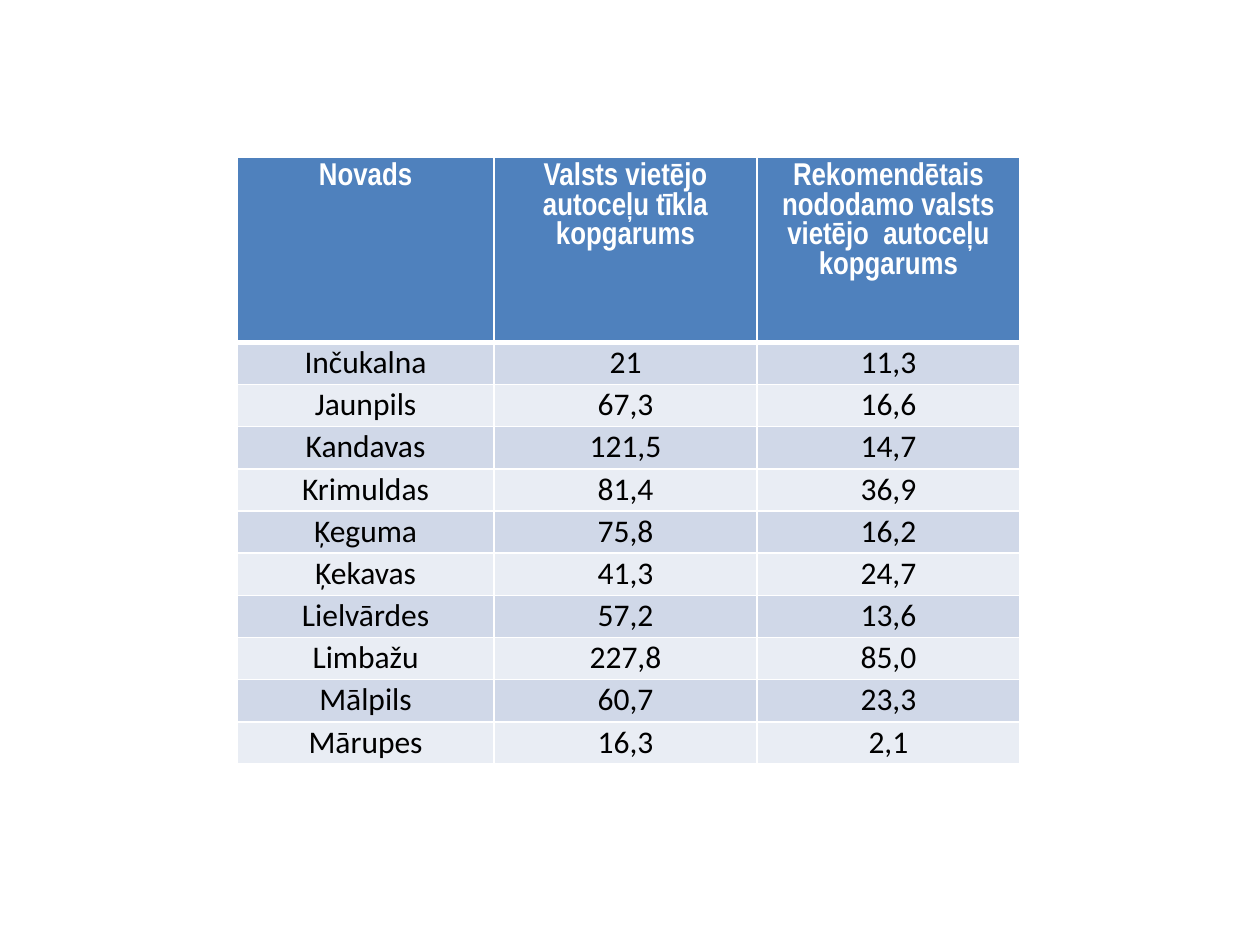
from dataclasses import dataclass

from lxml.etree import SubElement
from pptx import Presentation
from pptx.dml.color import RGBColor
from pptx.enum.text import MSO_ANCHOR, PP_ALIGN
from pptx.oxml.ns import qn
from pptx.table import _Cell
from pptx.util import Cm, Pt


@dataclass(frozen=True)
class Theme:
    header_fill: str = "4F81BD"
    band_fills: tuple[str, str] = ("D0D8E8", "E9EDF4")
    header_text: str = "FFFFFF"
    body_text: str = "000000"
    border: str = "FFFFFF"
    header_font: str = "Arial Narrow"
    body_font: str = "Calibri"
    text_size: int = 18
    thin: int = 1
    thick: int = 3


@dataclass(frozen=True)
class CellStyle:
    fill: str
    color: str
    font: str
    bold: bool
    anchor: MSO_ANCHOR
    margins: tuple[float, float, float, float]  # left, top, right, bottom in cm
    top: int
    bottom: int


@dataclass(frozen=True)
class Municipality:
    name: str
    network_length: str
    transfer_length: str


THEME = Theme()
HEADINGS = (
    "Novads",
    "Valsts vietējo autoceļu tīkla kopgarums",
    "Rekomendētais nododamo valsts vietējo  autoceļu kopgarums",
)
MUNICIPALITIES = (
    Municipality("Inčukalna", "21", "11,3"),
    Municipality("Jaunpils", "67,3", "16,6"),
    Municipality("Kandavas", "121,5", "14,7"),
    Municipality("Krimuldas", "81,4", "36,9"),
    Municipality("Ķeguma", "75,8", "16,2"),
    Municipality("Ķekavas", "41,3", "24,7"),
    Municipality("Lielvārdes", "57,2", "13,6"),
    Municipality("Limbažu", "227,8", "85,0"),
    Municipality("Mālpils", "60,7", "23,3"),
    Municipality("Mārupes", "16,3", "2,1"),
)
COLUMN_WIDTHS = (Cm(5.18), Cm(5.3), Cm(5.3))
HEADER_HEIGHT = Cm(3.72)
BODY_HEIGHT = Cm(0.85)


def header_style() -> CellStyle:
    return CellStyle(THEME.header_fill, THEME.header_text, THEME.header_font, True,
                     MSO_ANCHOR.TOP, (0.18, 0.1, 0.18, 0.1), THEME.thin, THEME.thick)


def body_style(index: int) -> CellStyle:
    """Alternate the bands; the first row shares the thick rule under the header."""
    return CellStyle(THEME.band_fills[index % 2], THEME.body_text, THEME.body_font, False,
                     MSO_ANCHOR.BOTTOM, (0, 0, 0, 0.05),
                     THEME.thin if index else THEME.thick, THEME.thin)


def add_borders(cell: _Cell, style: CellStyle) -> None:
    """Add the border lines, which must precede the cell's fill."""
    properties = cell._tc.get_or_add_tcPr()
    widths = {"a:lnL": THEME.thin, "a:lnR": THEME.thin,
              "a:lnT": style.top, "a:lnB": style.bottom}
    for edge, width in widths.items():
        line = SubElement(properties, qn(edge), w=str(Pt(width)))
        SubElement(SubElement(line, qn("a:solidFill")), qn("a:srgbClr"), val=THEME.border)


def fill_cell(cell: _Cell, content: str, style: CellStyle) -> None:
    add_borders(cell, style)
    cell.fill.solid()
    cell.fill.fore_color.rgb = RGBColor.from_string(style.fill)
    cell.vertical_anchor = style.anchor
    (cell.margin_left, cell.margin_top,
     cell.margin_right, cell.margin_bottom) = map(Cm, style.margins)
    cell.text_frame.text = content
    paragraph = cell.text_frame.paragraphs[0]
    paragraph.alignment = PP_ALIGN.CENTER
    font = paragraph.runs[0].font
    font.name = style.font
    font.size = Pt(THEME.text_size)
    font.bold = style.bold
    font.color.rgb = RGBColor.from_string(style.color)


def main() -> None:
    presentation = Presentation()
    presentation.slide_width, presentation.slide_height = Cm(25.4), Cm(19.05)
    slide = presentation.slides.add_slide(presentation.slide_layouts[6])

    rows = [(HEADINGS, header_style(), HEADER_HEIGHT)]
    for index, place in enumerate(MUNICIPALITIES):
        values = (place.name, place.network_length, place.transfer_length)
        rows.append((values, body_style(index), BODY_HEIGHT))

    road_lengths = slide.shapes.add_table(
        len(rows), len(HEADINGS), Cm(4.78), Cm(3.18),
        sum(COLUMN_WIDTHS), sum(height for _, _, height in rows)).table
    for column, width in zip(road_lengths.columns, COLUMN_WIDTHS):
        column.width = width
    for row, (values, style, height) in zip(road_lengths.rows, rows):
        row.height = height
        for cell, value in zip(row.cells, values):
            fill_cell(cell, value, style)

    presentation.save("out.pptx")


if __name__ == "__main__":
    main()
